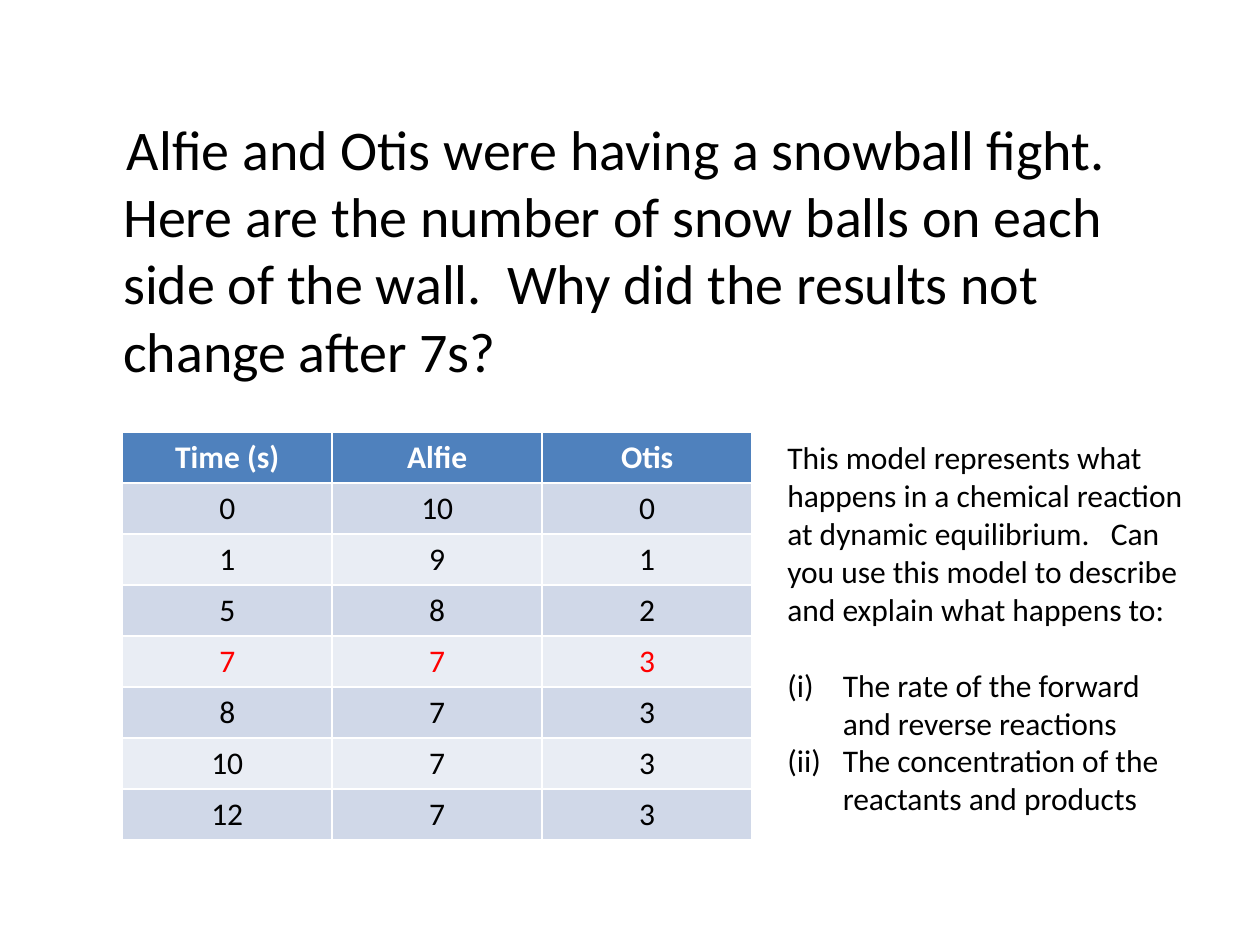
import pptx
import pptx.dml.color
import pptx.enum.text
import pptx.oxml
import pptx.oxml.ns
import pptx.util
from pptx.util import Inches, Pt

FONT = "Calibri"
BLACK, WHITE, RED = "000000", "FFFFFF", "FF0000"
HEADER_FILL = "4F81BD"
BAND_FILLS = ["D0D8E8", "E9EDF4"]

QUESTION = (
    "Alfie and Otis were having a snowball fight.  Here are the number of snow "
    "balls on each side of the wall.  Why did the results not change after 7s?"
)
HEADINGS = ("Time (s)", "Alfie", "Otis")
COUNTS = [
    (0, 10, 0),
    (1, 9, 1),
    (5, 8, 2),
    (7, 7, 3),
    (8, 7, 3),
    (10, 7, 3),
    (12, 7, 3),
]
EQUILIBRIUM_TIME = 7
TASK = (
    "This model represents what happens in a chemical reaction at dynamic "
    "equilibrium.   Can you use this model to describe and explain what happens to:"
)
TASK_PARTS = [
    "The rate of the forward and reverse reactions",
    "The concentration of the reactants and products",
]


def rgb(value):
    return pptx.dml.color.RGBColor.from_string(value)


def write(paragraph, text, size, color=BLACK, bold=False):
    paragraph.text = text
    font = paragraph.font
    font.name, font.size, font.bold = FONT, Pt(size), bold
    font.color.rgb = rgb(color)


def indent(paragraph, left, first_line):
    properties = paragraph._p.get_or_add_pPr()
    properties.set("marL", str(Inches(left)))
    properties.set("indent", str(Inches(first_line)))
    return properties


def add_text_frame(slide, left, top, width, height):
    frame = slide.shapes.add_textbox(
        Inches(left), Inches(top), Inches(width), Inches(height)
    ).text_frame
    frame.word_wrap = True
    return frame


def add_counts_table(slide):
    rows = [HEADINGS, *COUNTS]
    table = slide.shapes.add_table(
        len(rows), len(HEADINGS), Inches(0.97), Inches(3.43), Inches(5), Inches(3.24)
    ).table
    for r, row in enumerate(rows):
        is_header = r == 0
        if is_header:
            fill, color = HEADER_FILL, WHITE
        else:
            fill = BAND_FILLS[(r - 1) % 2]
            color = RED if row[0] == EQUILIBRIUM_TIME else BLACK
        for c, value in enumerate(row):
            cell = table.cell(r, c)
            cell.fill.solid()
            cell.fill.fore_color.rgb = rgb(fill)
            paragraph = cell.text_frame.paragraphs[0]
            write(paragraph, str(value), 18, color, is_header)
            paragraph.alignment = pptx.enum.text.PP_ALIGN.CENTER


def add_task(slide):
    frame = add_text_frame(slide, 6.15, 3.43, 3.35, 3.74)
    write(frame.paragraphs[0], TASK, 18)
    for i, part in enumerate(TASK_PARTS):
        paragraph = frame.add_paragraph()
        if i == 0:
            paragraph.space_before = Pt(22)
        properties = indent(paragraph, 0.44, -0.44)
        numbering = pptx.oxml.parse_xml(
            f'<a:buAutoNum {pptx.oxml.ns.nsdecls("a")} type="romanLcParenBoth"/>'
        )
        properties.append(numbering)
        write(paragraph, part, 18)


def main():
    presentation = pptx.Presentation()
    presentation.slide_width, presentation.slide_height = Inches(10), Inches(7.5)
    slide = presentation.slides.add_slide(presentation.slide_layouts[6])

    question = add_text_frame(slide, 0.5, 0.86, 9, 4.95).paragraphs[0]
    indent(question, 0.38, 0.03)
    write(question, QUESTION, 32)

    add_counts_table(slide)
    add_task(slide)
    presentation.save("out.pptx")


if __name__ == "__main__":
    main()
